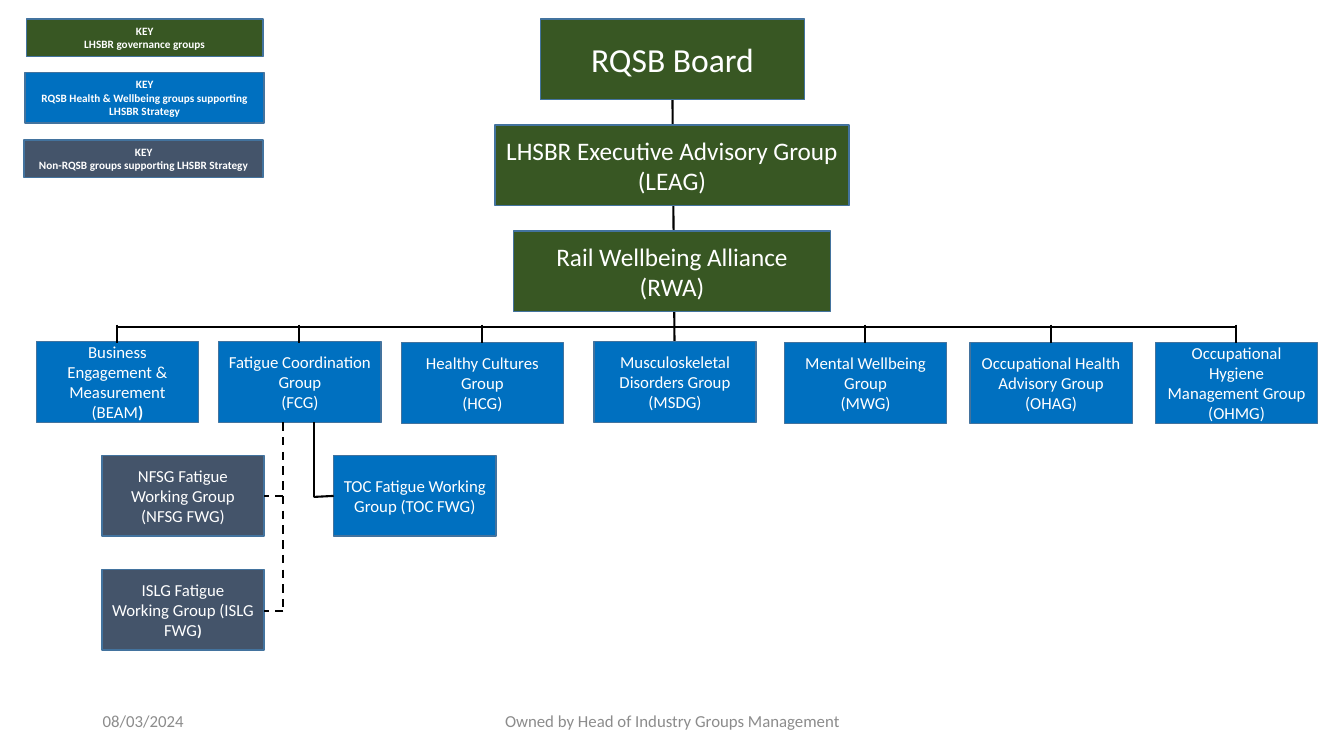
import pptx
import pptx.util
from lxml import etree
from pptx.dml.color import RGBColor
from pptx.enum.dml import MSO_LINE
from pptx.enum.shapes import MSO_CONNECTOR, MSO_SHAPE
from pptx.enum.text import MSO_ANCHOR, PP_ALIGN
from pptx.oxml.ns import qn

PX = 9144  # 100 px to the inch
GREEN = RGBColor(0x38, 0x57, 0x23)
BLUE = RGBColor(0x00, 0x70, 0xC0)
SLATE = RGBColor(0x44, 0x54, 0x6A)
BORDER = RGBColor(0x43, 0x73, 0x9E)
BLACK = RGBColor(0, 0, 0)
WHITE = RGBColor(0xFF, 0xFF, 0xFF)
GREY = RGBColor(0x8C, 0x8C, 0x8C)
FONT = "Calibri"
GROUP_WIDTH, BOX_HEIGHT = 161, 80

deck = pptx.Presentation()
deck.slide_width, deck.slide_height = 1333 * PX, 750 * PX
slide = deck.slides.add_slide(deck.slide_layouts[6])


def add_box(left, top, width, height, fill, text, size, bold=False):
    box = slide.shapes.add_shape(
        MSO_SHAPE.RECTANGLE, left * PX, top * PX, width * PX, height * PX)
    box.shadow.inherit = False
    box.fill.solid()
    box.fill.fore_color.rgb = fill
    box.line.color.rgb = BORDER
    box.line.width = pptx.util.Pt(1)
    frame = box.text_frame
    frame.word_wrap = True
    frame.vertical_anchor = MSO_ANCHOR.MIDDLE
    frame.text = text
    for paragraph in frame.paragraphs:
        paragraph.alignment = PP_ALIGN.CENTER
        for run in paragraph.runs:
            run.font.name = FONT
            run.font.size = pptx.util.Pt(size)
            run.font.bold = bold
            run.font.color.rgb = WHITE
    return box


def add_link(x1, y1, x2, y2, dashed=False):
    link = slide.shapes.add_connector(
        MSO_CONNECTOR.STRAIGHT, x1 * PX, y1 * PX, x2 * PX, y2 * PX)
    link.line.color.rgb = BLACK
    link.line.width = pptx.util.Pt(1.5)
    if dashed:
        link.line.dash_style = MSO_LINE.DASH
    etree.SubElement(link._element.spPr, qn("a:effectLst"))


# Spine from the board down, behind the governance boxes
add_link(667, 99, 669, 339)

for left, top, width, height, fill, meaning in [
    (26, 19, 235, 37, GREEN, "LHSBR governance groups"),
    (25, 72, 237, 50, BLUE, "RQSB Health & Wellbeing groups supporting LHSBR Strategy"),
    (24, 139, 237, 37, SLATE, "Non-RQSB groups supporting LHSBR Strategy"),
]:
    add_box(left, top, width, height, fill, "KEY\n" + meaning, 8, bold=True)

for left, top, width, name, size in [
    (536, 19, 262, "RQSB Board", 24),
    (491, 124, 351, "LHSBR Executive Advisory Group (LEAG)", 18),
    (509, 229, 315, "Rail Wellbeing Alliance\n(RWA)", 18),
]:
    add_box(left, top, width, BOX_HEIGHT, GREEN, name, size)

# Last value: size of a bold closing bracket, where there is one
boxes_below = [
    (36, 339, BLUE, "Business Engagement & Measurement (BEAM", 12),
    (217, 339, BLUE, "Fatigue Coordination Group\n(FCG)", None),
    (398, 340, BLUE, "Healthy Cultures Group\n(HCG)", None),
    (589, 339, BLUE, "Musculoskeletal Disorders Group\n(MSDG)", None),
    (778, 340, BLUE, "Mental Wellbeing Group\n(MWG)", None),
    (962, 340, BLUE, "Occupational Health Advisory Group\n(OHAG)", None),
    (1146, 340, BLUE, "Occupational Hygiene Management Group (OHMG)", None),
    (101, 452, SLATE, "NFSG Fatigue Working Group (NFSG FWG)", None),
    (331, 452, BLUE, "TOC Fatigue Working Group (TOC FWG)", None),
    (101, 565, SLATE, "ISLG Fatigue Working Group (ISLG FWG", 11),
]
for left, top, fill, name, bracket_size in boxes_below:
    box = add_box(left, top, GROUP_WIDTH, BOX_HEIGHT, fill, name, 12)
    if bracket_size:
        bracket = box.text_frame.paragraphs[-1].add_run()
        bracket.text = ")"
        bracket.font.name = FONT
        bracket.font.size = pptx.util.Pt(bracket_size)
        bracket.font.bold = True
        bracket.font.color.rgb = WHITE

# Crossbar with a drop to each group; the spine already reaches the middle one
add_link(115, 324, 1226, 324)
for group_left in (36, 217, 398, 778, 962, 1146):
    add_link(group_left + 80, 322, group_left + 80, 340)

# Fatigue working groups
add_link(311, 419, 311, 493)
add_link(311, 493, 331, 492)
add_link(281, 419, 281, 606, dashed=True)
for y in (492, 606):
    add_link(281, y, 262, y, dashed=True)

for left, width, text, alignment in [
    (92, 300, "08/03/2024", PP_ALIGN.LEFT),
    (442, 450, "Owned by Head of Industry Groups Management", PP_ALIGN.CENTER),
]:
    footer = slide.shapes.add_textbox(left * PX, 695 * PX, width * PX, 40 * PX).text_frame
    footer.word_wrap = True
    footer.vertical_anchor = MSO_ANCHOR.MIDDLE
    footer.text = text
    footer.paragraphs[0].alignment = alignment
    font = footer.paragraphs[0].runs[0].font
    font.name, font.size = FONT, pptx.util.Pt(12)
    font.color.rgb = GREY

deck.save("out.pptx")
